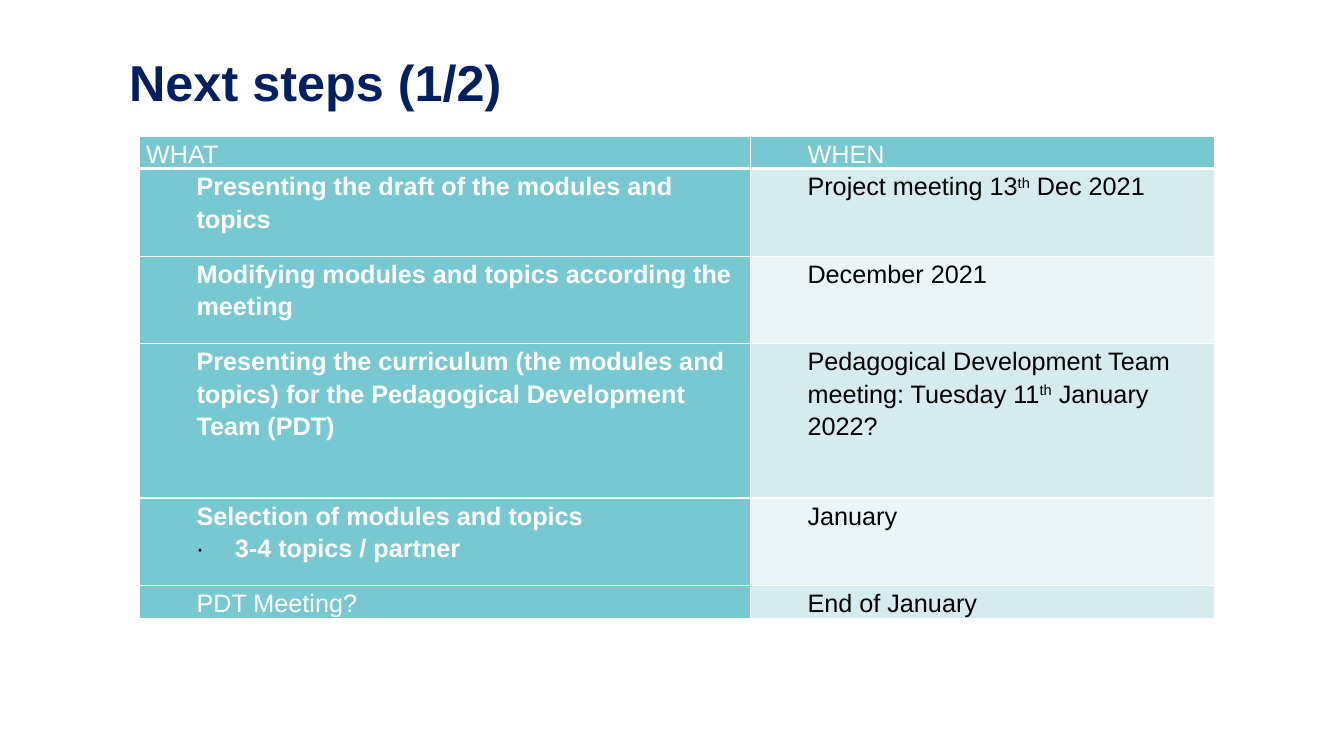
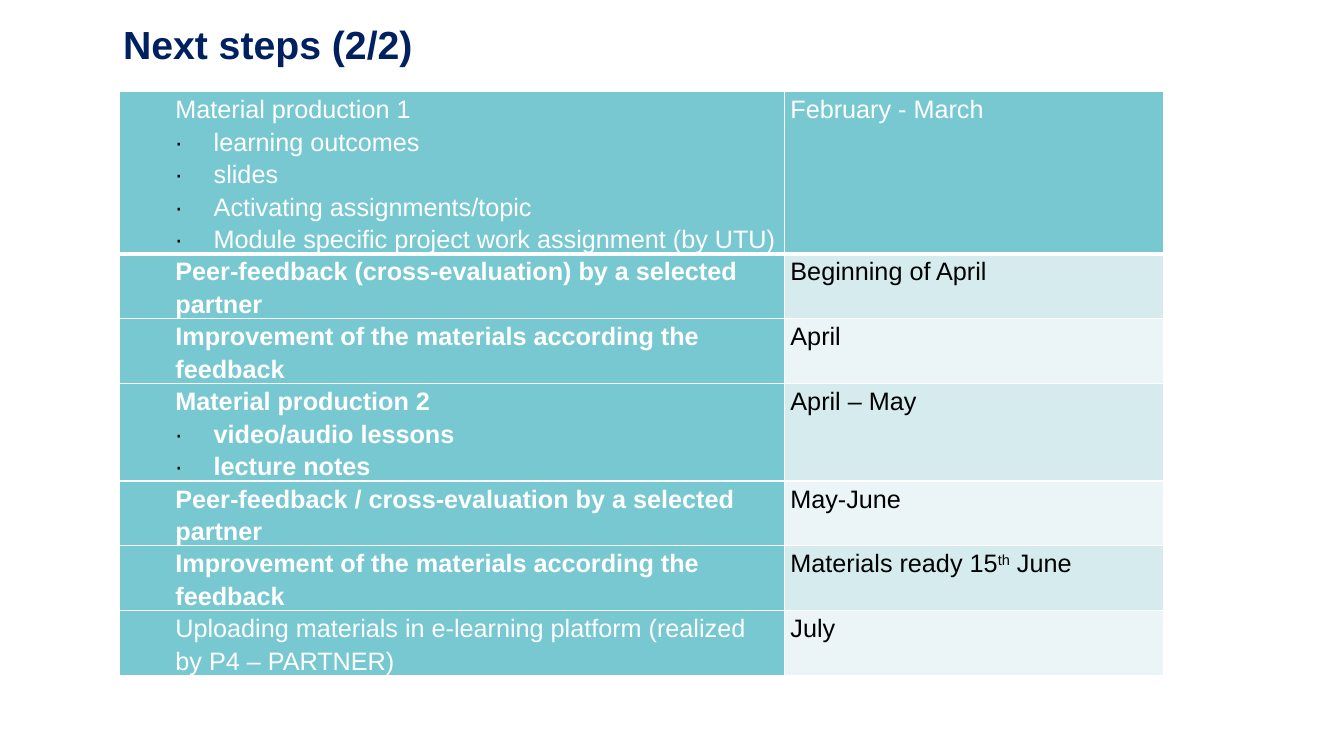
from dataclasses import dataclass
from typing import Any

from lxml import etree
from pptx import Presentation
from pptx import util as u
from pptx.dml.color import RGBColor
from pptx.enum import text
from pptx.oxml import ns


@dataclass(frozen=True)
class Theme:
    font: str = "Arial"
    navy: str = "002060"
    teal: str = "78C8D2"
    bands: tuple[str, str] = ("EBF5F7", "D5EBEE")
    white: str = "FFFFFF"
    black: str = "000000"
    body_size: int = 18
    rule: float = 1
    header_rule: float = 3
    title_spacing: float = 0.9
    body_spacing: float = 1.15
    indent: float = 0.5
    bullet_indent: float = 0.88
    bullet_hang: float = 0.38


THEME = Theme()
TITLE_ONLY = 5


@dataclass(frozen=True)
class Step:
    height: float
    what: str
    when: str
    details: tuple[str, ...] = ()
    what_indent: float = THEME.indent


@dataclass(frozen=True)
class Schedule:
    title: str
    title_box: tuple[float, float, float, float]
    title_size: int
    corner: tuple[float, float]
    columns: tuple[float, float]
    cell_margin: float
    when_indent: float
    steps: tuple[Step, ...]


SCHEDULES = (
    Schedule(
        "Next steps (1/2)", (1.18, 0.48, 11.09, 0.69), 36,
        (1.38, 1.35), (6.06, 4.61), 0.07, THEME.indent,
        (
            Step(0.32, "WHAT", "WHEN", what_indent=0),
            Step(0.87, "Presenting the draft of the modules and topics",
                 "Project meeting 13^th^ Dec 2021"),
            Step(0.87, "Modifying modules and topics according the meeting",
                 "December 2021"),
            Step(1.53, "Presenting the curriculum (the modules and topics) "
                 "for the Pedagogical Development Team (PDT)",
                 "Pedagogical Development Team meeting: "
                 "Tuesday 11^th^ January 2022?"),
            Step(0.87, "Selection of modules and topics", "January",
                 ("3-4 topics / partner",)),
            Step(0.32, "PDT Meeting?", "End of January"),
        ),
    ),
    Schedule(
        "Next steps (2/2)", (1.12, 0.29, 11.09, 0.43), 28,
        (1.18, 0.91), (6.6, 3.76), 0.06, 0,
        (
            Step(1.6, "Material production 1", "February - March",
                 ("learning outcomes", "slides", "Activating assignments/topic",
                  "Module specific project work assignment (by UTU)")),
            Step(0.64, "Peer-feedback (cross-evaluation) by a selected partner",
                 "Beginning of April"),
            Step(0.64, "Improvement of the materials according the feedback",
                 "April"),
            Step(0.96, "Material production 2", "April – May",
                 ("video/audio lessons", "lecture notes")),
            Step(0.64, "Peer-feedback / cross-evaluation by a selected partner",
                 "May-June"),
            Step(0.64, "Improvement of the materials according the feedback",
                 "Materials ready 15^th^ June"),
            Step(0.64, "Uploading materials in e-learning platform "
                 "(realized by P4 – PARTNER)", "July"),
        ),
    ),
)


def apply_format(target: Any, values: dict[str, Any]) -> None:
    for name, value in values.items():
        setattr(target, name, value)


def style_font(font: Any, size: int, color: str, bold: bool) -> None:
    apply_format(font, {"name": THEME.font, "size": u.Pt(size), "bold": bold})
    font.color.rgb = RGBColor.from_string(color)


def add_child(parent: Any, tag: str, **attributes: str) -> Any:
    return etree.SubElement(parent, ns.qn(tag), attributes)


def indent_paragraph(paragraph: Any, left: float, hang: float = 0) -> Any:
    properties = paragraph._p.get_or_add_pPr()
    properties.set("marL", str(u.Inches(left)))
    properties.set("indent", str(-u.Inches(hang)))
    return properties


def add_bullet(paragraph: Any) -> None:
    properties = indent_paragraph(
        paragraph, THEME.bullet_indent, THEME.bullet_hang)
    add_child(add_child(properties, "a:buClr"), "a:srgbClr", val=THEME.black)
    add_child(properties, "a:buFont", typeface=THEME.font)
    add_child(properties, "a:buChar", char="∙")


def write_runs(paragraph: Any, content: str, color: str, bold: bool) -> None:
    """Write the content, raising the parts enclosed in carets."""
    paragraph.line_spacing = THEME.body_spacing
    for index, part in enumerate(content.split("^")):
        run = paragraph.add_run()
        run.text = part
        style_font(run.font, THEME.body_size, color, bold)
        if index % 2:
            run.font._element.set("baseline", "30000")


def set_borders(cell: Any, top: float, bottom: float) -> None:
    widths = {"a:lnL": THEME.rule, "a:lnR": THEME.rule,
              "a:lnT": top, "a:lnB": bottom}
    properties = cell._tc.get_or_add_tcPr()
    for position, (tag, width) in enumerate(widths.items()):
        line = etree.Element(ns.qn(tag), w=str(u.Pt(width)))
        add_child(add_child(line, "a:solidFill"), "a:srgbClr", val=THEME.white)
        properties.insert(position, line)


def fill_cell(cell: Any, fill: str, margin: float, row: int) -> None:
    apply_format(cell, {
        "margin_left": u.Inches(margin), "margin_right": u.Inches(margin),
        "margin_top": 0, "margin_bottom": 0,
        "vertical_anchor": text.MSO_ANCHOR.TOP,
    })
    cell.fill.solid()
    cell.fill.fore_color.rgb = RGBColor.from_string(fill)
    set_borders(cell,
                top=THEME.header_rule if row == 1 else THEME.rule,
                bottom=THEME.header_rule if row == 0 else THEME.rule)


def write_step(cells: Any, step: Step, row: int, schedule: Schedule) -> None:
    is_header = row == 0
    bold = 0 < row < len(schedule.steps) - 1
    what, when = cells
    fill_cell(what, THEME.teal, schedule.cell_margin, row)
    fill_cell(when, THEME.teal if is_header else THEME.bands[row % 2],
              schedule.cell_margin, row)

    task = what.text_frame.paragraphs[0]
    indent_paragraph(task, step.what_indent)
    write_runs(task, step.what, THEME.white, bold)
    for detail in step.details:
        item = what.text_frame.add_paragraph()
        add_bullet(item)
        write_runs(item, detail, THEME.white, bold)

    date = when.text_frame.paragraphs[0]
    indent_paragraph(date, schedule.when_indent)
    write_runs(date, step.when, THEME.white if is_header else THEME.black, False)


def write_title(title: Any, schedule: Schedule) -> None:
    sides = ("left", "top", "width", "height")
    apply_format(title, dict(zip(sides, map(u.Inches, schedule.title_box))))
    frame = title.text_frame
    frame.text = schedule.title
    apply_format(frame, {
        "word_wrap": True,
        "auto_size": text.MSO_AUTO_SIZE.NONE,
        "vertical_anchor": text.MSO_ANCHOR.BOTTOM,
    })
    heading = frame.paragraphs[0]
    apply_format(heading, {"alignment": text.PP_ALIGN.LEFT,
                           "line_spacing": THEME.title_spacing})
    style_font(heading.runs[0].font, schedule.title_size, THEME.navy, True)


def add_schedule(deck: Any, schedule: Schedule) -> None:
    slide = deck.slides.add_slide(deck.slide_layouts[TITLE_ONLY])
    write_title(slide.shapes.title, schedule)
    steps = schedule.steps
    left, top = map(u.Inches, schedule.corner)
    table = slide.shapes.add_table(
        len(steps), len(schedule.columns), left, top,
        u.Inches(sum(schedule.columns)),
        u.Inches(sum(step.height for step in steps))).table
    apply_format(table, {"first_row": False, "horz_banding": False})
    for column, width in zip(table.columns, schedule.columns):
        column.width = u.Inches(width)
    for index, (row, step) in enumerate(zip(table.rows, steps)):
        row.height = u.Inches(step.height)
        write_step(row.cells, step, index, schedule)


def main() -> None:
    deck = Presentation()
    apply_format(deck, {"slide_width": u.Inches(13.33),
                        "slide_height": u.Inches(7.5)})
    for schedule in SCHEDULES:
        add_schedule(deck, schedule)
    deck.save("out.pptx")


if __name__ == "__main__":
    main()
